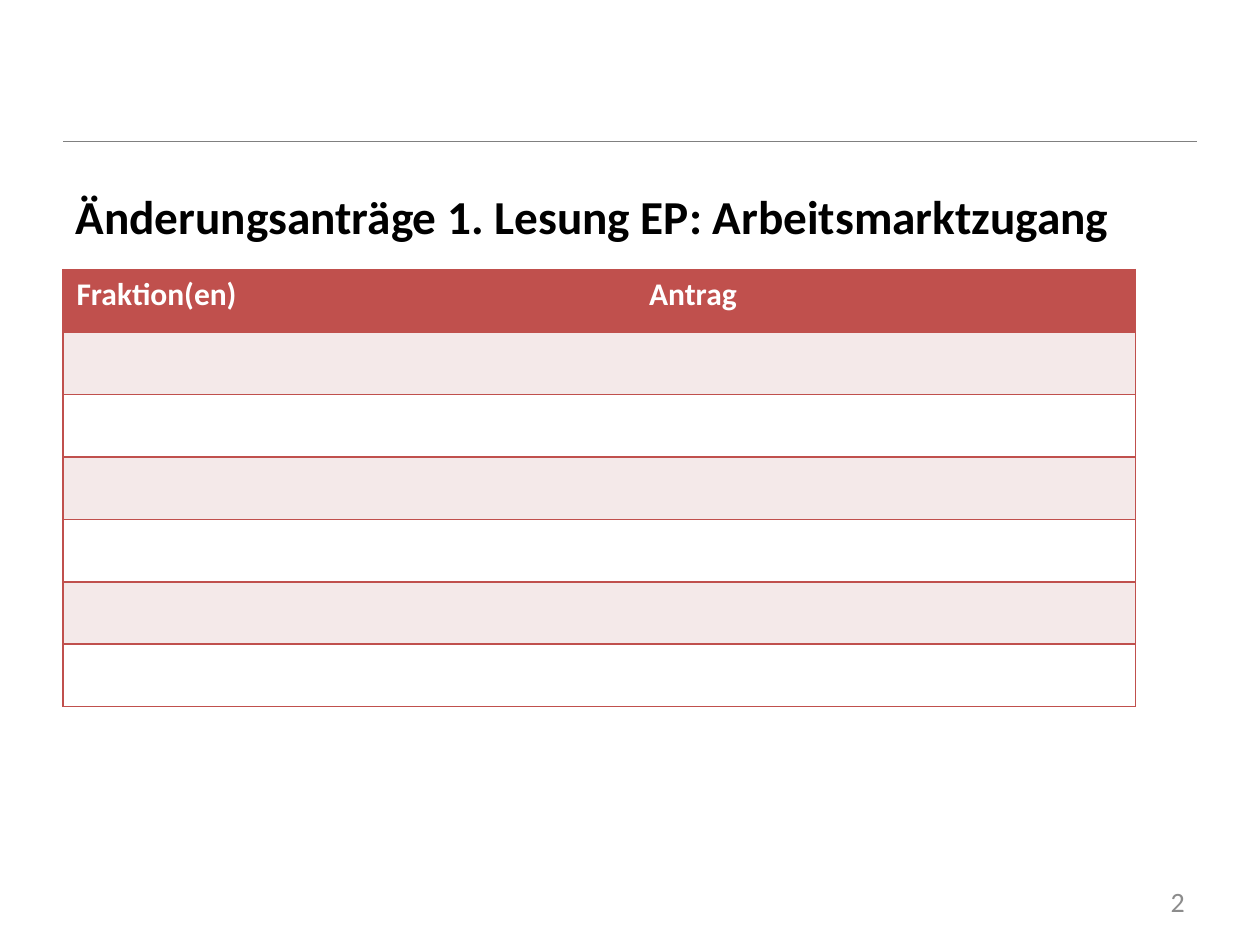
"""Build the slide listing first-reading amendments on labour market access."""
from dataclasses import dataclass

from lxml import etree
from pptx import Presentation
from pptx.dml.color import RGBColor
from pptx.enum.shapes import MSO_CONNECTOR
from pptx.enum.text import MSO_ANCHOR, MSO_AUTO_SIZE, PP_ALIGN
from pptx.oxml.ns import qn
from pptx.slide import Slide
from pptx.table import _Cell
from pptx.text.text import _Paragraph
from pptx.util import Pt

STRAIGHT = MSO_CONNECTOR.STRAIGHT
MIDDLE = MSO_ANCHOR.MIDDLE
NO_AUTOFIT = MSO_AUTO_SIZE.NONE
LEFT, CENTER, RIGHT = PP_ALIGN.LEFT, PP_ALIGN.CENTER, PP_ALIGN.RIGHT

BLACK = RGBColor(0x00, 0x00, 0x00)
WHITE = RGBColor(0xFF, 0xFF, 0xFF)
RED = RGBColor(0xC0, 0x50, 0x4D)
PALE_RED = RGBColor(0xF4, 0xE9, 0xE9)
RULE_GRAY = RGBColor(0x80, 0x80, 0x80)
NUMBER_GRAY = RGBColor(0x8C, 0x8C, 0x8C)

FONT = "Calibri"
MARGIN = Pt(36)
CONTENT_WIDTH = Pt(648)
ROW_COUNT = 7
ROW_HEIGHT = Pt(35.7)


@dataclass(frozen=True)
class Column:
    heading: str
    width: float
    borders: str


COLUMNS = (
    Column("Fraktion(en)", 107, "LTB"),
    Column("Antrag", 506, "RTB"),
)


def format_paragraph(paragraph: _Paragraph, size: float, color: RGBColor,
                     align: PP_ALIGN, bold: bool = False) -> None:
    paragraph.alignment = align
    font = paragraph.font
    font.name, font.size, font.bold = FONT, Pt(size), bold
    font.color.rgb = color


def draw_borders(cell: _Cell, shown: str) -> None:
    properties = cell._tc.get_or_add_tcPr()
    for side in "LRTB":
        border = etree.SubElement(properties, qn(f"a:ln{side}"), w=str(Pt(1)))
        if side in shown:
            fill = etree.SubElement(border, qn("a:solidFill"))
            etree.SubElement(fill, qn("a:srgbClr"), val=str(RED))
        else:
            etree.SubElement(border, qn("a:noFill"))


def add_rule(slide: Slide) -> None:
    y = Pt(80.8)
    rule = slide.shapes.add_connector(STRAIGHT, MARGIN, y, MARGIN + CONTENT_WIDTH, y)
    rule.line.color.rgb = RULE_GRAY
    rule.line.width = Pt(0.5)
    etree.SubElement(rule._element.spPr, qn("a:effectLst"))


def add_title(slide: Slide, text: str) -> None:
    title = slide.shapes.title
    title.left, title.top, title.width, title.height = MARGIN, Pt(93), CONTENT_WIDTH, Pt(60.5)
    frame = title.text_frame
    frame.text = text
    frame.auto_size = NO_AUTOFIT
    frame.vertical_anchor = MIDDLE
    format_paragraph(frame.paragraphs[0], 27, BLACK, LEFT, bold=True)


def add_amendments(slide: Slide) -> None:
    width = Pt(sum(column.width for column in COLUMNS))
    amendments = slide.shapes.add_table(
        ROW_COUNT, len(COLUMNS), MARGIN, Pt(154), width, ROW_HEIGHT * ROW_COUNT).table
    for row in amendments.rows:
        row.height = ROW_HEIGHT
    for index, column in enumerate(COLUMNS):
        amendments.columns[index].width = Pt(column.width)
        for row_index in range(ROW_COUNT):
            cell = amendments.cell(row_index, index)
            draw_borders(cell, column.borders)
            cell.fill.solid()
            cell.fill.fore_color.rgb = PALE_RED if row_index % 2 else WHITE
        heading = amendments.cell(0, index)
        heading.fill.fore_color.rgb = RED
        heading.text = column.heading
        format_paragraph(heading.text_frame.paragraphs[0], 18, WHITE, CENTER, bold=True)


def add_page_number(slide: Slide, number: int) -> None:
    frame = slide.shapes.add_textbox(Pt(516), Pt(500.5), Pt(168), Pt(28.75)).text_frame
    frame.word_wrap = True
    frame.vertical_anchor = MIDDLE
    frame.text = str(number)
    format_paragraph(frame.paragraphs[0], 16, NUMBER_GRAY, RIGHT)


def main() -> None:
    deck = Presentation()
    deck.slide_width, deck.slide_height = Pt(720), Pt(540)
    slide = deck.slides.add_slide(deck.slide_layouts[5])
    add_rule(slide)
    add_title(slide, "Änderungsanträge 1. Lesung EP: Arbeitsmarktzugang")
    add_amendments(slide)
    add_page_number(slide, 2)
    deck.save("out.pptx")


if __name__ == "__main__":
    main()
